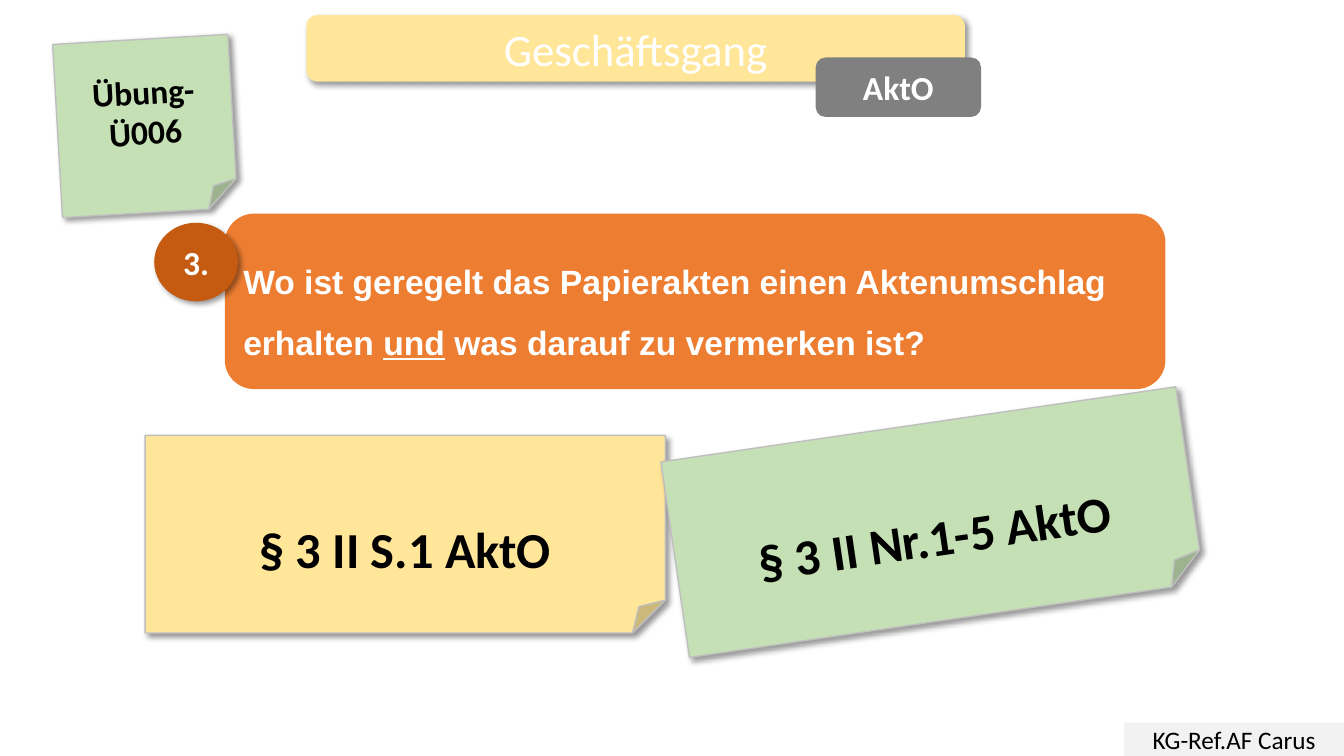
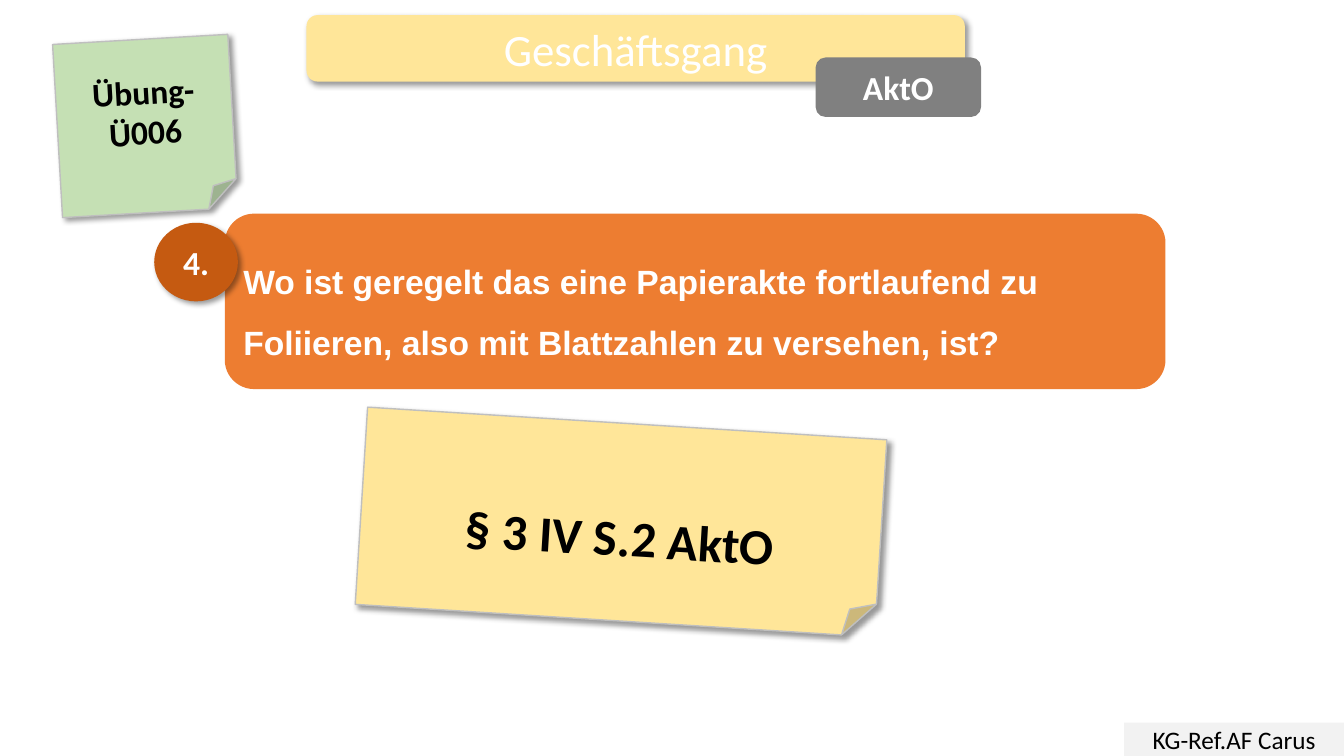
from lxml.etree import SubElement
from pptx import Presentation
from pptx.dml.color import RGBColor
from pptx.enum.shapes import MSO_SHAPE as SHAPE
from pptx.enum.text import MSO_ANCHOR as ANCHOR, PP_ALIGN as ALIGN
from pptx.oxml.ns import qn
from pptx.util import Inches, Pt

YELLOW, GREEN, ORANGE, RUST = "FFE699", "C5E0B4", "ED7D31", "C55A11"
GREY, SILVER, PALE, WHITE, BLACK = "808080", "BFBFBF", "F2F2F2", "FFFFFF", "000000"


def rgb(code):
    return RGBColor.from_string(code)


def add_box(slide, text, kind, at, fill, size=24, color=WHITE, bold=True, font="Calibri",
            align=ALIGN.CENTER, spacing=None, top=0.05, rotation=0, line=None, shadow=False):
    shape = slide.shapes.add_shape(kind, *[Inches(length) for length in at])
    shape.rotation = rotation
    shape.shadow.inherit = False
    shape.fill.solid()
    shape.fill.fore_color.rgb = rgb(fill)
    if line:
        shape.line.color.rgb = rgb(line)
        shape.line.width = Pt(1)
    else:
        shape.line.fill.background()
    if shadow:
        effects = shape._element.spPr.find(qn("a:effectLst"))
        outer = SubElement(effects, qn("a:outerShdw"), blurRad=str(Pt(4)), dist=str(Pt(3)),
                           dir="2700000", algn="tl", rotWithShape="0")
        tint = SubElement(outer, qn("a:srgbClr"), val=BLACK)
        SubElement(tint, qn("a:alpha"), val="40000")
    frame = shape.text_frame
    frame.word_wrap = True
    frame.vertical_anchor = ANCHOR.MIDDLE
    frame.margin_top = Inches(top)
    for index, row in enumerate(text.split("\n")):
        paragraph = frame.add_paragraph() if index else frame.paragraphs[0]
        paragraph.alignment = align
        if spacing:
            paragraph.line_spacing = spacing
        for part, words in enumerate(row.split("_")):
            run = paragraph.add_run()
            run.text = words
            run.font.name = font
            run.font.size = Pt(size)
            run.font.bold = bold
            run.font.underline = part % 2 == 1
            run.font.color.rgb = rgb(color)


exercises = [
    ("3.", "Wo ist geregelt das Papierakten einen Aktenumschlag erhalten _und_ was darauf zu vermerken ist?",
     [("§ 3 II S.1 AktO", 1.44, 4.32, 0, YELLOW), ("§ 3 II Nr.1-5 AktO", 6.67, 4.2, 351.7, GREEN)]),
    ("4.", "Wo ist geregelt das eine Papierakte fortlaufend zu Foliieren, also mit Blattzahlen zu versehen, ist?",
     [("§ 3 IV S.2 AktO", 3.58, 4.2, 3.6, YELLOW)]),
]
note_style = dict(color=BLACK, line=SILVER, shadow=True)

deck = Presentation()
deck.slide_width, deck.slide_height = Inches(13.33), Inches(7.5)

for number, question, answers in exercises:
    slide = deck.slides.add_slide(deck.slide_layouts[6])
    add_box(slide, "KG-Ref.AF Carus", SHAPE.RECTANGLE, (11.15, 7.17, 2.18, 0.33), PALE,
            size=18, color=BLACK, bold=False)
    add_box(slide, "Geschäftsgang", SHAPE.ROUNDED_RECTANGLE, (3.04, 0.15, 6.53, 0.66), YELLOW,
            size=32, bold=False, shadow=True)
    add_box(slide, "Übung-\nÜ006", SHAPE.FOLDED_CORNER, (0.57, 0.39, 1.74, 1.72), GREEN,
            rotation=356.7, **note_style)
    add_box(slide, question, SHAPE.ROUNDED_RECTANGLE, (2.23, 2.12, 9.33, 1.74), ORANGE,
            font="Arial", align=ALIGN.LEFT, spacing=1.5)
    add_box(slide, number, SHAPE.FLOWCHART_CONNECTOR, (1.53, 2.21, 0.83, 0.78), RUST, shadow=True)
    add_box(slide, "AktO", SHAPE.ROUNDED_RECTANGLE, (8.09, 0.57, 1.64, 0.59), GREY)
    for answer, left, top, rotation, fill in answers:
        add_box(slide, answer, SHAPE.FOLDED_CORNER, (left, top, 5.16, 1.96), fill,
                size=36, top=0.66, rotation=rotation, **note_style)

deck.save("out.pptx")
